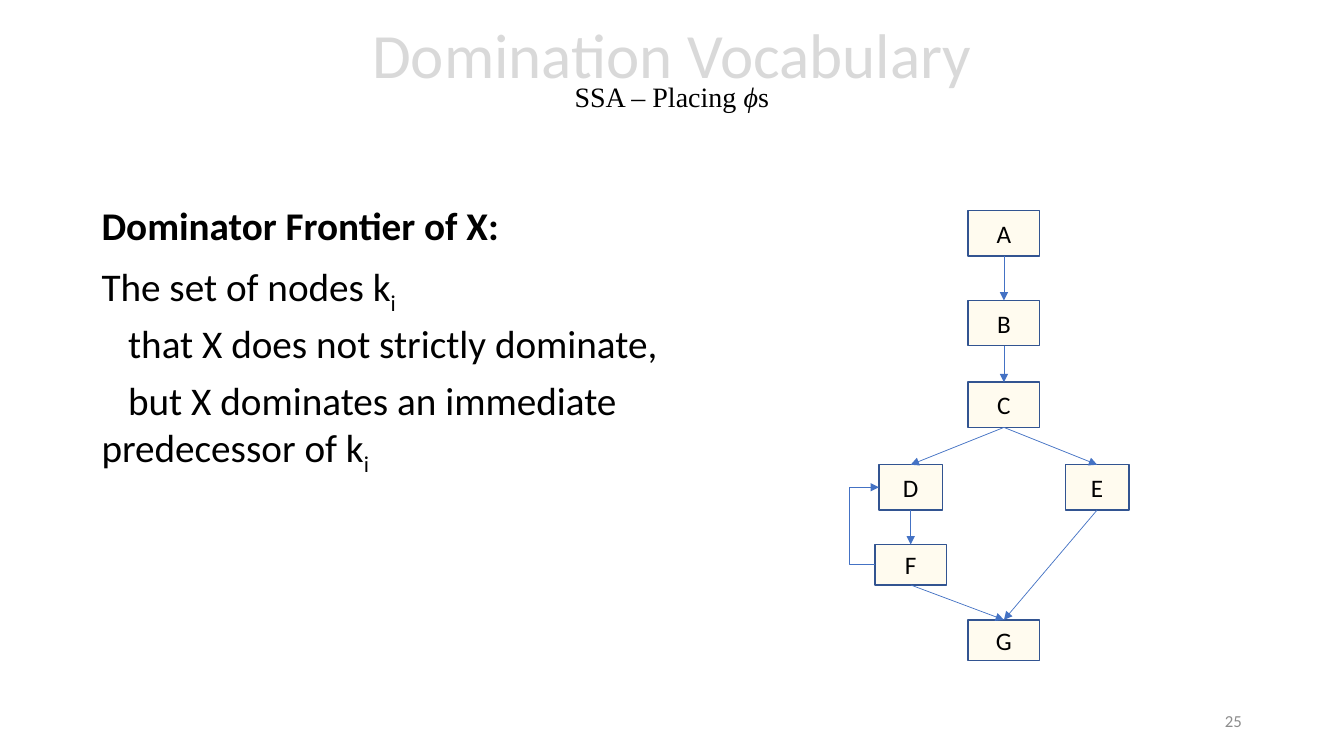
from lxml.etree import SubElement as Sub
from pptx import Presentation
from pptx.dml.color import RGBColor as Rgb
from pptx.enum.shapes import MSO_CONNECTOR as Conn, MSO_SHAPE as Shape
from pptx.enum.text import MSO_ANCHOR as Anchor, MSO_AUTO_SIZE as Fit, PP_ALIGN as Align
from pptx.oxml.ns import qn
from pptx.util import Cm, Pt


def hue(fmt, code):
    fmt.rgb = Rgb.from_string(code)


class Page:
    """Draws styled elements on one slide."""

    ink, grey, pale = "000000", "8C8C8C", "D9D9D9"
    cream, navy, blue = "FFF2CC", "325491", "4472C4"
    sans, serif = "Calibri", "Times New Roman"

    def __init__(self, slide):
        self.slide = slide

    def run(self, para, text, size, code=ink, face=sans, base=0, **font):
        run = para.add_run()
        run.text = text
        for key, val in dict(name=face, size=Pt(size), **font).items():
            setattr(run.font, key, val)
        hue(run.font.color, code)
        if base:
            run.font._element.set("baseline", str(base * 1000))

    def frame(self, shape, anchor):
        opts = dict(word_wrap=True, auto_size=Fit.NONE, vertical_anchor=anchor)
        for key, val in opts.items():
            setattr(shape.text_frame, key, val)
        return shape.text_frame

    def title(self, x, y, w, h, head, parts):
        shape = self.slide.shapes.title
        area = dict(left=Cm(x), top=Cm(y), width=Cm(w), height=Cm(h))
        for key, val in area.items():
            setattr(shape, key, val)
        para = self.frame(shape, Anchor.MIDDLE).paragraphs[0]
        para.alignment, para.line_spacing = Align.CENTER, 0.7
        self.run(para, head, 45, self.pale)
        para.add_line_break()
        for text, slant in parts:
            self.run(para, text, 20, face=self.serif, italic=slant)

    def text(self, x, y, w, h, anchor=Anchor.TOP):
        box = self.slide.shapes.add_textbox(Cm(x), Cm(y), Cm(w), Cm(h))
        return self.frame(box, anchor)

    def body(self, x, y, w, h, lines):
        frame = self.text(x, y, w, h)
        for i, (text, sub, bold, dent) in enumerate(lines):
            para = frame.add_paragraph() if i else frame.paragraphs[0]
            para.line_spacing, para.space_before = 0.9, Pt(10)
            para._p.get_or_add_pPr().set("indent", str(Cm(dent)))
            self.run(para, text, 28, bold=bold)
            if sub:
                self.run(para, sub, 28, base=-25)

    def number(self, x, y, w, h, text):
        para = self.text(x, y, w, h, Anchor.MIDDLE).paragraphs[0]
        para.alignment = Align.RIGHT
        self.run(para, text, 12, self.grey)

    def node(self, name, mid, top, w, h):
        box = self.slide.shapes.add_shape(
            Shape.RECTANGLE, Cm(mid - w / 2), Cm(top), Cm(w), Cm(h))
        box.shadow.inherit = False
        box.fill.solid()
        hue(box.fill.fore_color, self.cream)
        tint = box.fill._xPr.find(".//" + qn("a:srgbClr"))
        Sub(tint, qn("a:alpha"), val="30000")
        hue(box.line.color, self.navy)
        box.line.width = Pt(1)
        para = self.frame(box, Anchor.MIDDLE).paragraphs[0]
        para.alignment = Align.CENTER
        self.run(para, name, 18)

    def arrow(self, start, end, bend=None):
        kind = Conn.STRAIGHT if bend is None else Conn.ELBOW
        link = self.slide.shapes.add_connector(
            kind, *(Cm(v) for v in (*start, *end)))
        hue(link.line.color, self.blue)
        link.line.width = Pt(0.5)
        props = link._element.spPr
        Sub(props.find(qn("a:ln")), qn("a:tailEnd"), type="triangle")
        Sub(props, qn("a:effectLst"))
        if bend is not None:
            ratio = (bend - start[0]) / (end[0] - start[0])
            guides = props.find(qn("a:prstGeom")).get_or_add_avLst()
            Sub(guides, qn("a:gd"), name="adj1",
                fmla=f"val {round(ratio * 100000)}")


def main():
    deck = Presentation()
    deck.slide_width, deck.slide_height = Cm(33.87), Cm(19.05)
    page = Page(deck.slides.add_slide(deck.slide_layouts[5]))
    page.title(4.23, 0.03, 25.4, 3.68, "Domination Vocabulary",
               [("SSA – Placing ", False), ("ϕ", True), ("s", False)])
    page.body(2.31, 5.08, 16.76, 12.09, [
        ("Dominator Frontier of X:", "", True, 0),
        ("The set of nodes k", "i", False, 0),
        ("that X does not strictly dominate,", "", False, 0.67),
        ("but X dominates an immediate predecessor of k", "i", False, 0.67)])
    page.number(23.93, 17.65, 7.62, 1.02, "25")

    left, mid, right = 22.95, 25.3, 27.65
    nodes = {
        "A": (mid, 5.31, 1.8, 1.14), "B": (mid, 7.57, 1.8, 1.14),
        "C": (mid, 9.63, 1.8, 1.14), "D": (left, 11.71, 1.6, 1.14),
        "E": (right, 11.71, 1.6, 1.14), "F": (left, 13.72, 1.8, 1.02),
        "G": (mid, 15.62, 1.8, 1.02)}
    for name, area in nodes.items():
        page.node(name, *area)
    for tail, head in ("AB", "BC", "CD", "CE", "DF", "EG", "FG"):
        x, y, _, h = nodes[tail]
        page.arrow((x, y + h), nodes[head][:2])
    sides = [(x - w / 2, y + h / 2) for x, y, w, h in (nodes["F"], nodes["D"])]
    page.arrow(*sides, bend=21.41)
    deck.save("out.pptx")


if __name__ == "__main__":
    main()
